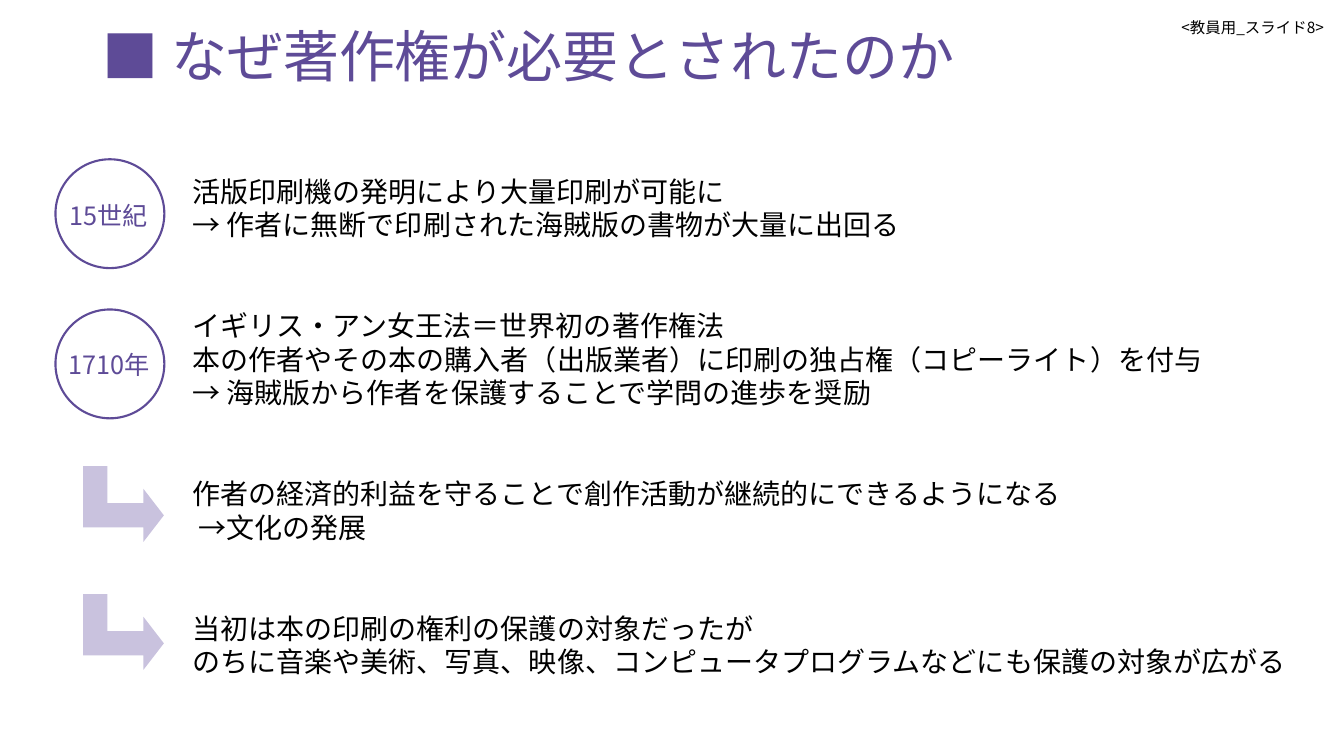
from lxml.etree import SubElement
from pptx import Presentation
from pptx.dml.color import RGBColor
from pptx.enum.shapes import MSO_SHAPE as Shape
from pptx.enum.text import MSO_ANCHOR as Anchor, PP_ALIGN as Align
from pptx.oxml.ns import qn
from pptx.util import Pt

PX = 9144
FONT = "Noto Sans CJK JP"
COLORS = {"purple": "5E4B97", "lilac": "C9C2DE", "white": "FFFFFF", "black": "000000"}

presentation = Presentation()
presentation.slide_width = 1333 * PX
presentation.slide_height = 750 * PX
slide = presentation.slides.add_slide(presentation.slide_layouts[6])


def add_text(box, groups, size, color, spacing, align=Align.LEFT, anchor=Anchor.TOP, gap=0):
    text_box = slide.shapes.add_textbox(*(length * PX for length in box))
    frame = text_box.text_frame
    frame.word_wrap = True
    frame.vertical_anchor = anchor
    paragraph = frame.paragraphs[0]
    for group_index, group in enumerate(groups):
        for line_index, line in enumerate(group):
            if group_index or line_index:
                paragraph = frame.add_paragraph()
            paragraph.alignment = align
            paragraph.line_spacing = spacing
            paragraph.space_before = Pt(gap if group_index and not line_index else 0)
            run = paragraph.add_run()
            run.text = line
            run.font.size = Pt(size)
            run.font.name = FONT
            run.font.color.rgb = RGBColor.from_string(COLORS[color])
            SubElement(run.font._element, qn("a:ea"), typeface=FONT)


def add_shape(kind, box, fill):
    shape = slide.shapes.add_shape(kind, *(length * PX for length in box))
    shape.shadow.inherit = False
    shape.fill.solid()
    shape.fill.fore_color.rgb = RGBColor.from_string(COLORS[fill])
    shape.line.fill.background()
    return shape


add_text((92, 0, 1150, 118), [["■ なぜ著作権が必要とされたのか"]], 40, "purple", 0.9,
         anchor=Anchor.MIDDLE)
add_text((1000, 15, 323, 26), [["<教員用_スライド8>"]], 11, "black", 0.9, align=Align.RIGHT)

history = [
    ["活版印刷機の発明により大量印刷が可能に",
     "→ 作者に無断で印刷された海賊版の書物が大量に出回る"],
    ["イギリス・アン女王法＝世界初の著作権法",
     "本の作者やその本の購入者（出版業者）に印刷の独占権（コピーライト）を付与",
     "→ 海賊版から作者を保護することで学問の進歩を奨励"],
    ["作者の経済的利益を守ることで創作活動が継続的にできるようになる",
     " →文化の発展"],
    ["当初は本の印刷の権利の保護の対象だったが",
     "のちに音楽や美術、写真、映像、コンピュータプログラムなどにも保護の対象が広がる"],
]
add_text((181, 168, 1117, 515), history, 20, "black", Pt(24), gap=48)

for top in (460, 587):
    arrow = add_shape(Shape.BENT_UP_ARROW, (85, top, 75, 80), "lilac")
    arrow.rotation = 90
    for index, adjustment in enumerate((0.32, 0.35, 0.27)):
        arrow.adjustments[index] = adjustment

dates = [
    (158, "15世紀", (57, 194, 102, 40)),
    (307, "1710年", (54, 342, 108, 40)),
]
for top, date, label_box in dates:
    circle = add_shape(Shape.OVAL, (55, top, 108, 108), "white")
    circle.line.color.rgb = RGBColor.from_string(COLORS["purple"])
    circle.line.width = Pt(1.5)
    add_text(label_box, [[date]], 18, "purple", Pt(21.6), align=Align.CENTER)

presentation.save("out.pptx")
